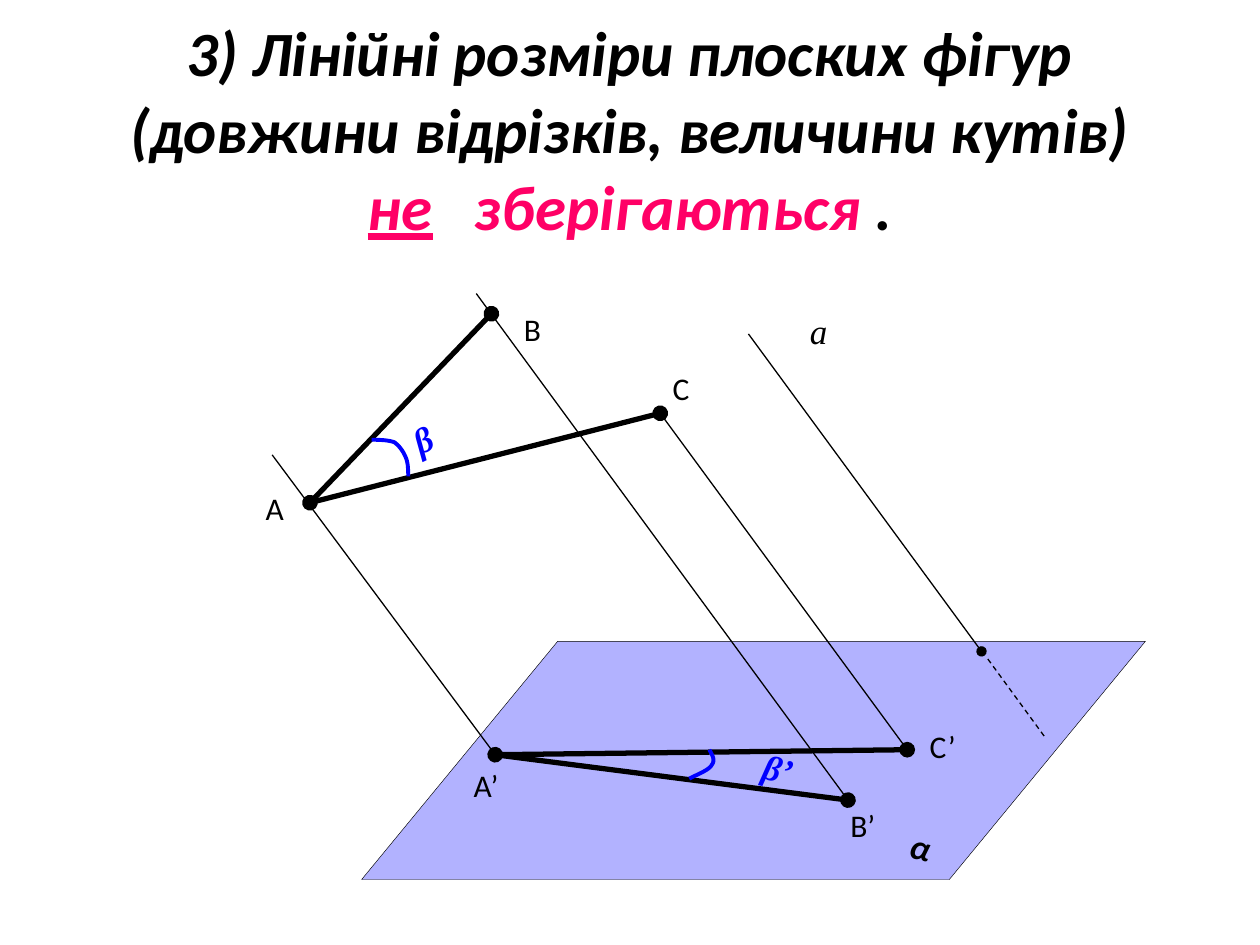
"""Build a slide on parallel projection: lengths and angles are not preserved."""
from lxml.etree import SubElement
from pptx import Presentation
from pptx.dml.color import RGBColor
from pptx.enum.dml import MSO_LINE
from pptx.enum.shapes import MSO_CONNECTOR, MSO_SHAPE
from pptx.enum.text import PP_ALIGN
from pptx.oxml.ns import qn
from pptx.util import Inches, Pt

COLORS = {"ink": "000000", "blue": "0000FF", "pink": "FF0066"}
BODY, MATH = "Calibri", "Times New Roman"
THIN, THICK = 0.75, 3

TITLE = [
    [("3) Лінійні розміри плоских фігур", "ink", False, 0)],
    [("(довжини відрізків, величини кутів)", "ink", False, 0)],
    [("не", "pink", True, 0), (" ", "pink", False, 16),
     ("зберігаються", "pink", False, 0), (" .", "ink", False, 0)],
]

A, B, C = (2.46, 3.99), (3.9, 2.49), (5.24, 3.28)
A1, B1, C1 = (3.93, 5.99), (6.73, 6.35), (7.2, 5.95)

# start, end, width, oval at start, oval at end, dashed
LINES = [
    (A, B, THICK, True, True, False),
    ((3.78, 2.33), B1, THIN, False, True, False),
    ((2.16, 3.61), A1, THIN, False, False, False),
    ((5.94, 2.65), (7.79, 5.17), THIN, False, True, False),
    (A1, B1, THICK, True, True, False),
    ((7.84, 5.23), (8.3, 5.86), THIN, False, False, True),
    (A, C, THICK, False, True, False),
    (C, C1, THIN, False, True, False),
    (A1, C1, THICK, False, True, False),
]

ARCS = [
    [(2.95, 3.49), (2.98, 3.49), (3.08, 3.49), (3.13, 3.51), (3.17, 3.54),
     (3.2, 3.58), (3.22, 3.63), (3.24, 3.67), (3.24, 3.75), (3.24, 3.78)],
    [(5.63, 5.95), (5.65, 5.99), (5.68, 6.03), (5.65, 6.07),
     (5.63, 6.11), (5.55, 6.14), (5.47, 6.18)],
]

POINT_LABELS = [
    ("A", 2.01, 3.83, 0.39), ("B", 4.06, 2.41, 0.39), ("C", 5.24, 2.88, 0.39),
    ("A’", 3.66, 6.03, 0.55), ("B’", 6.65, 6.35, 0.55), ("C’", 7.28, 5.72, 0.49),
]

# text, left, top, width, rotation, font, colour, bold
SYMBOLS = [
    ("α", 7.13, 6.51, 0.41, 13.8, BODY, "ink", True),
    ("а", 6.33, 2.41, 0.32, 0, MATH, "ink", False),
    ("β", 3.18, 3.26, 0.39, 334.6, MATH, "blue", True),
    ("β’", 5.96, 5.91, 0.64, 14.1, MATH, "blue", True),
]


def rgb(name):
    return RGBColor.from_string(COLORS[name])


def add_plane(page):
    plane = page.shapes.add_shape(
        MSO_SHAPE.PARALLELOGRAM, Inches(2.87), Inches(5.09), Inches(6.22), Inches(1.89))
    plane.adjustments[0] = 0.823
    plane.shadow.inherit = False
    plane.fill.solid()
    plane.fill.fore_color.rgb = rgb("blue")
    color = plane.fill._xPr.find(qn("a:solidFill"))[0]
    SubElement(color, qn("a:alpha")).set("val", "30000")
    plane.line.color.rgb = rgb("ink")
    plane.line.width = Pt(0.25)


def add_line(page, start, end, width, start_dot, end_dot, dashed):
    line = page.shapes.add_connector(
        MSO_CONNECTOR.STRAIGHT, *(Inches(value) for value in start + end))
    line.line.color.rgb = rgb("ink")
    line.line.width = Pt(width)
    if dashed:
        line.line.dash_style = MSO_LINE.DASH
    outline = line.line._get_or_add_ln()
    for tag, dotted in (("a:headEnd", start_dot), ("a:tailEnd", end_dot)):
        if dotted:
            SubElement(outline, qn(tag)).set("type", "oval")
    SubElement(line._element.spPr, qn("a:effectLst"))


def curve_points(controls, steps=10):
    points = [controls[0]]
    for index in range(0, len(controls) - 1, 3):
        segment = controls[index:index + 4]
        for step in range(1, steps + 1):
            t = step / steps
            weights = ((1 - t) ** 3, 3 * t * (1 - t) ** 2, 3 * t * t * (1 - t), t ** 3)
            points.append(tuple(
                sum(w * p[axis] for w, p in zip(weights, segment)) for axis in (0, 1)))
    return [(Inches(x), Inches(y)) for x, y in points]


def add_arc(page, controls):
    first, *rest = curve_points(controls)
    builder = page.shapes.build_freeform(*first)
    builder.add_line_segments(rest, close=False)
    arc = builder.convert_to_shape()
    arc.shadow.inherit = False
    arc.fill.background()
    arc.line.color.rgb = rgb("blue")
    arc.line.width = Pt(2.25)


def add_box(page, left, top, width, height):
    box = page.shapes.add_textbox(*(Inches(v) for v in (left, top, width, height)))
    box.text_frame.word_wrap = True
    return box


def set_font(font, name, size, bold=False, italic=False):
    font.name, font.size, font.bold, font.italic = name, Pt(size), bold, italic


def add_label(page, text, left, top, width, height, size, name=BODY,
              color="ink", bold=False, italic=False, rotation=0):
    box = add_box(page, left, top, width, height)
    box.rotation = rotation
    para = box.text_frame.paragraphs[0]
    para.text = text
    set_font(para.font, name, size, bold, italic)
    para.font.color.rgb = rgb(color)


def add_title(page):
    frame = add_box(page, 0, 0.27, 10, 1.78).text_frame
    for index, spans in enumerate(TITLE):
        para = frame.add_paragraph() if index else frame.paragraphs[0]
        para.alignment = PP_ALIGN.CENTER
        para.line_spacing = 0.6
        if index:
            para.space_before = Pt(18)
        set_font(para.font, BODY, 36, True, True)
        for text, color, underlined, tracking in spans:
            span = para.add_run()
            span.text = text
            span.font.color.rgb = rgb(color)
            if underlined:
                span.font.underline = True
            if tracking:
                span._r.get_or_add_rPr().set("spc", str(tracking * 100))


def main():
    deck = Presentation()
    deck.slide_width, deck.slide_height = Inches(10), Inches(7.5)
    page = deck.slides.add_slide(deck.slide_layouts[6])
    add_plane(page)
    for line in LINES:
        add_line(page, *line)
    for controls in ARCS:
        add_arc(page, controls)
    for text, left, top, width in POINT_LABELS:
        add_label(page, text, left, top, width, 0.4, 18)
    for text, left, top, width, rotation, name, color, bold in SYMBOLS:
        add_label(page, text, left, top, width, 0.43, 20, name, color, bold, True, rotation)
    add_title(page)
    deck.save("out.pptx")


if __name__ == "__main__":
    main()
